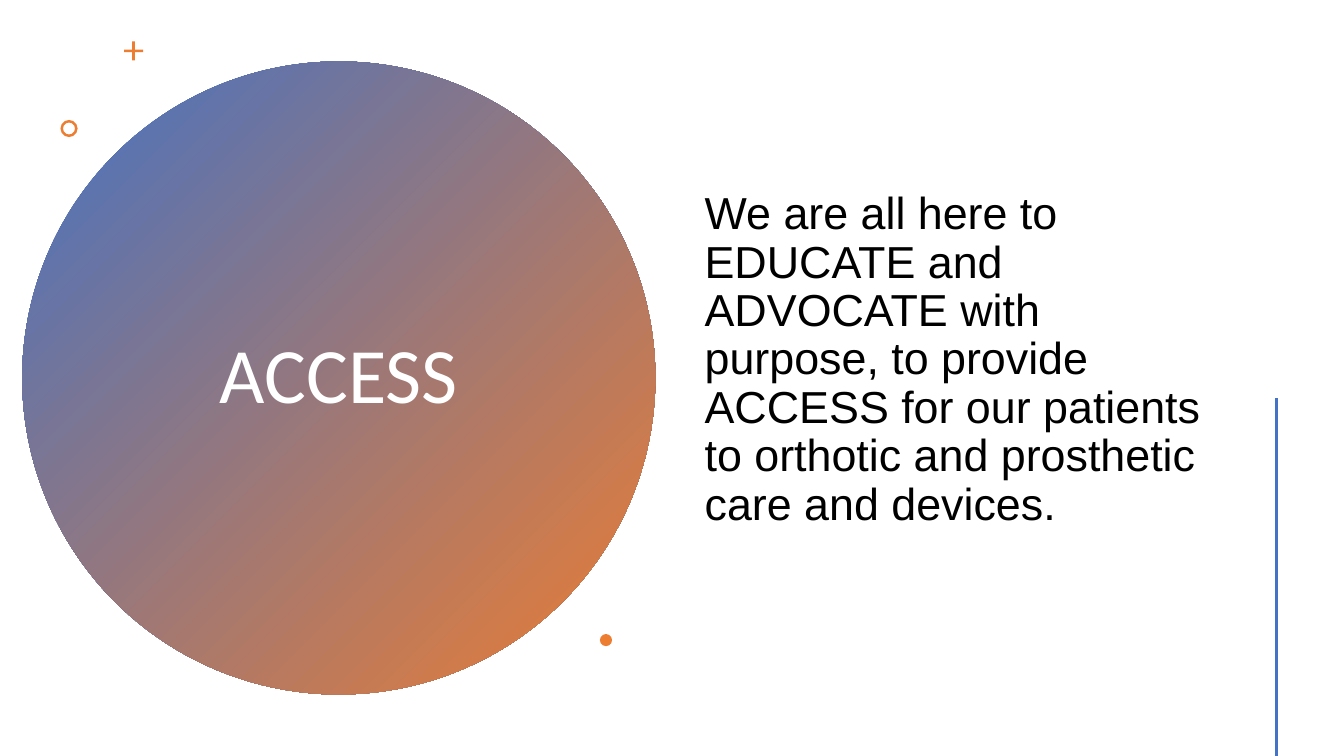
from pptx import Presentation
from pptx.dml.color import RGBColor
from pptx.enum.shapes import MSO_CONNECTOR, MSO_SHAPE
from pptx.enum.text import MSO_ANCHOR, PP_ALIGN
from pptx.oxml.ns import qn
from pptx.util import Inches, Pt
from lxml import etree

OVAL, RING, PLUS = MSO_SHAPE.OVAL, MSO_SHAPE.DONUT, MSO_SHAPE.CROSS
STRAIGHT = MSO_CONNECTOR.STRAIGHT
MIDDLE = MSO_ANCHOR.MIDDLE
LEFT, CENTER = PP_ALIGN.LEFT, PP_ALIGN.CENTER

WIDTH, HEIGHT = 13.33, 7.5
COLORS = {"blue": "4472C4", "orange": "ED7D31", "white": "FFFFFF", "black": "000000"}
STATEMENT = ("We are all here to EDUCATE and ADVOCATE with purpose, to provide "
             "ACCESS for our patients to orthotic and prosthetic care and devices.")


def color(name):
    return RGBColor.from_string(COLORS[name])


def add_mark(s, kind, x, y, size, adjust=None):
    """Orange or gradient-ready shape in a square box, without outline."""
    sp = s.shapes.add_shape(kind, Inches(x), Inches(y), Inches(size), Inches(size))
    sp.shadow.inherit = False
    sp.line.fill.background()
    sp.fill.solid()
    sp.fill.fore_color.rgb = color("orange")
    if adjust is not None:
        sp.adjustments[0] = adjust
    return sp


def add_text(s, box, text, font, size, tint, align, bottom=0.05):
    """Vertically centred paragraph in a box of (x, y, w, h)."""
    tf = s.shapes.add_textbox(*map(Inches, box)).text_frame
    tf.word_wrap = True
    tf.vertical_anchor = MIDDLE
    tf.margin_bottom = Inches(bottom)
    tf.text = text
    p = tf.paragraphs[0]
    p.alignment = align
    p.line_spacing = 0.9
    r = p.runs[0]
    r.font.name, r.font.size = font, Pt(size)
    r.font.color.rgb = color(tint)


def title_disc(s, x, y, size):
    """Gradient disc with the title and its three small marks."""
    disc = add_mark(s, OVAL, x, y, size)
    disc.fill.gradient()
    disc.fill.gradient_angle = 315
    for stop, name in zip(disc.fill.gradient_stops, ("blue", "orange")):
        stop.color.rgb = color(name)

    inset = 0.18 * size
    add_text(s, (x + inset, y + 0.8, size - 2 * inset, size - 1.6),
             "ACCESS", "Calibri", 56, "white", CENTER)

    add_mark(s, PLUS, x + 1.01, y - 0.2, 0.19, 0.43)
    add_mark(s, RING, x + 0.38, y + 0.58, 0.17, 0.15)
    add_mark(s, OVAL, x + 5.73, y + 5.68, 0.12)


def statement(s, x, y, w, h):
    """Statement text, set slightly above the middle of its box."""
    add_text(s, (x, y, w, h), STATEMENT, "Arial", 32, "black", LEFT, bottom=0.42)


def side_rule(s, x, top, bottom):
    """Vertical blue line running to the foot of the slide."""
    rule = s.shapes.add_connector(STRAIGHT, Inches(x), Inches(top), Inches(x), Inches(bottom))
    rule.line.color.rgb = color("blue")
    rule.line.width = Pt(2)
    etree.SubElement(rule._element.spPr, qn("a:effectLst"))


def main():
    prs = Presentation()
    prs.slide_width, prs.slide_height = Inches(WIDTH), Inches(HEIGHT)
    s = prs.slides.add_slide(prs.slide_layouts[6])
    title_disc(s, 0.22, 0.61, 6.28)
    statement(s, 6.89, 0.57, 5.22, 6.38)
    side_rule(s, 0.95 * WIDTH, 3.95, HEIGHT)
    prs.save("out.pptx")


if __name__ == "__main__":
    main()
